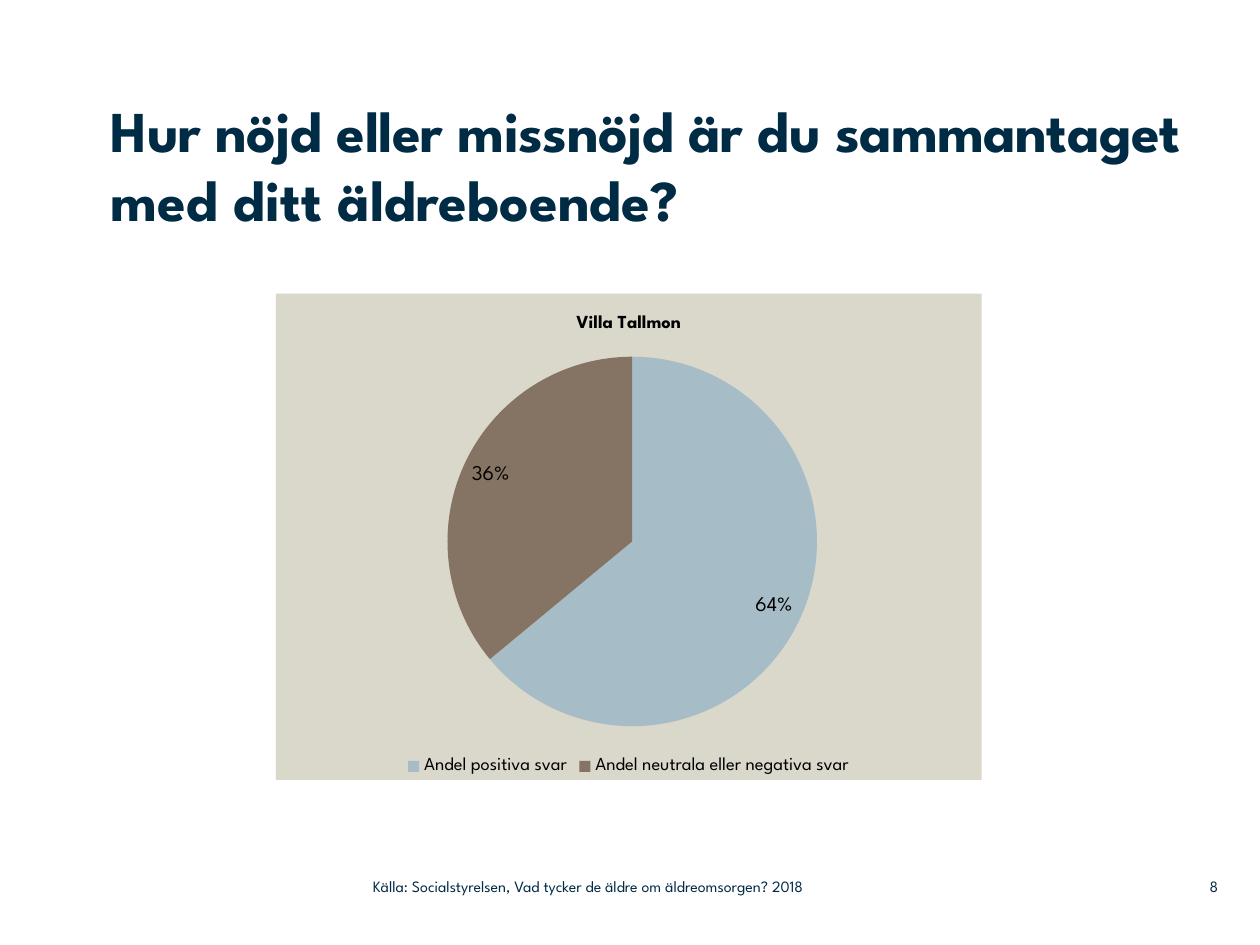
from lxml import etree
from pptx import Presentation
from pptx import util as u
from pptx.chart.data import CategoryChartData
from pptx.dml.color import RGBColor
from pptx.enum import chart as ch, text
from pptx.oxml import parse_xml
from pptx.oxml.ns import nsdecls, qn

NAVY = RGBColor(0x00, 0x2B, 0x45)
BLACK = RGBColor(0, 0, 0)
SAND = RGBColor(0xDA, 0xD7, 0xCB)
BLUE = RGBColor(0xA6, 0xBC, 0xC6)
BROWN = RGBColor(0x85, 0x73, 0x63)
FACE = "League Spartan"
WIDE, HIGH = 10, 7.5

HEAD = [("Hur nöjd eller missnöjd är du sammantaget ", -30), ("med ditt äldreboende?", 0)]
HOME = "Villa Tallmon"
PARTS = [("Andel positiva svar", 64, BLUE), ("Andel neutrala eller negativa svar", 36, BROWN)]
FOOT = [
    ("Källa: Socialstyrelsen, Vad tycker de äldre om äldreomsorgen? 2018", 2.96, 4.43, text.PP_ALIGN.LEFT),
    ("8", 9.2, 0.47, text.PP_ALIGN.RIGHT),
]
PLOT = {"x": 0.24, "y": 0.13, "w": 0.53, "h": 0.76}


def style(font, size, color, bold=False):
    font.name, font.size, font.bold = FACE, u.Pt(size), bold
    font.color.rgb = color


def frame(shape, anchor):
    box = shape.text_frame
    box.word_wrap = True
    box.auto_size = text.MSO_AUTO_SIZE.NONE
    box.vertical_anchor = anchor
    box.margin_left = box.margin_top = box.margin_right = box.margin_bottom = 0
    return box.paragraphs[0]


def add_run(para, words, size, bold=False):
    run = para.add_run()
    run.text = words
    style(run.font, size, NAVY, bold)
    return run


def add_head(slide):
    title = slide.shapes.title
    title.left, title.top, title.width, title.height = map(u.Inches, (0.88, 0.75, 8.83, 1.42))
    para = frame(title, text.MSO_ANCHOR.TOP)
    para.alignment = text.PP_ALIGN.LEFT
    for words, gap in HEAD:
        run = add_run(para, words, 33, True)
        run.font._element.set("spc", str(gap))


def add_pie(slide):
    data = CategoryChartData()
    data.categories = [name for name, _, _ in PARTS]
    data.add_series("Series 1", [val for _, val, _ in PARTS])
    pie = slide.shapes.add_chart(
        ch.XL_CHART_TYPE.PIE, *map(u.Inches, (2.19, 2.33, 5.6, 3.86)), data
    ).chart
    style(pie.font, 18, BLACK)

    pie.has_title = True
    run = pie.chart_title.text_frame.paragraphs[0].add_run()
    run.text = HOME
    style(run.font, 10.5, BLACK, True)
    pie.chart_title.include_in_layout = False

    pie.has_legend = True
    pie.legend.position = ch.XL_LEGEND_POSITION.BOTTOM
    pie.legend.include_in_layout = False
    style(pie.legend.font, 10.5, BLACK)

    plot = pie.plots[0]
    plot.vary_by_categories = True
    plot.has_data_labels = True
    tags = plot.data_labels
    tags.show_percentage, tags.show_value = True, False
    tags.number_format, tags.number_format_is_linked = "0%", False
    tags.position = ch.XL_LABEL_POSITION.INSIDE_END
    style(tags.font, 12, BLACK)
    for i, (_, _, color) in enumerate(PARTS):
        part = plot.series[0].points[i].format
        part.fill.solid()
        part.fill.fore_color.rgb = color
        part.line.fill.background()

    space = pie._chartSpace
    area = space.find(qn("c:chart")).find(qn("c:plotArea"))
    old = area.find(qn("c:layout"))
    if old is not None:
        area.remove(old)
    lay = parse_xml(f"<c:layout {nsdecls('c')}/>")
    man = etree.SubElement(lay, qn("c:manualLayout"))
    rules = [("layoutTarget", "inner"), ("xMode", "edge"), ("yMode", "edge"), *PLOT.items()]
    for tag, val in rules:
        etree.SubElement(man, qn(f"c:{tag}")).set("val", str(val))
    area.insert(0, lay)
    space.find(qn("c:chart")).addnext(parse_xml(
        f'<c:spPr {nsdecls("c", "a")}><a:solidFill><a:srgbClr val="{SAND}"/></a:solidFill>'
        "<a:ln><a:noFill/></a:ln></c:spPr>"
    ))


def add_foot(slide):
    for words, left, width, align in FOOT:
        box = slide.shapes.add_textbox(*map(u.Inches, (left, 6.89, width, 0.29)))
        para = frame(box, text.MSO_ANCHOR.MIDDLE)
        para.alignment = align
        add_run(para, words, 9)


def main():
    deck = Presentation()
    deck.slide_width, deck.slide_height = u.Inches(WIDE), u.Inches(HIGH)
    slide = deck.slides.add_slide(deck.slide_layouts[5])
    add_head(slide)
    add_pie(slide)
    add_foot(slide)
    deck.save("out.pptx")


if __name__ == "__main__":
    main()
